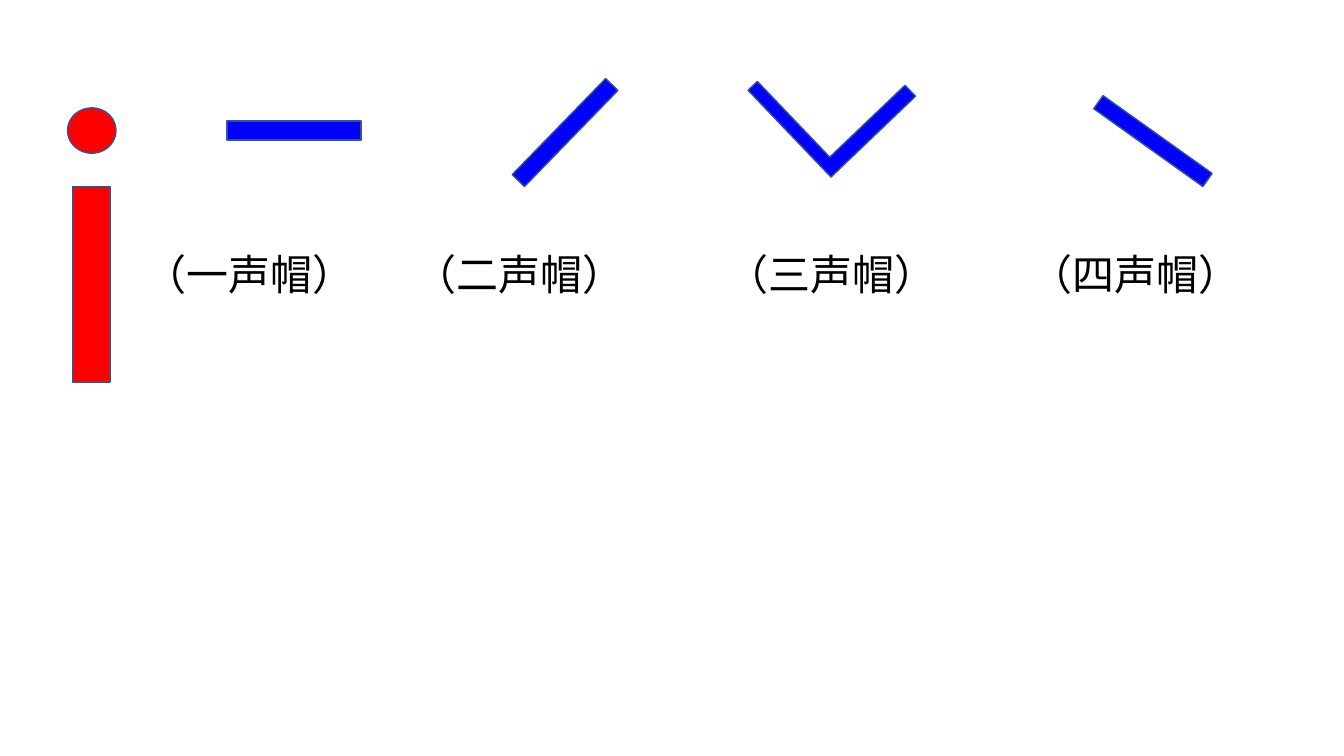
from dataclasses import dataclass

from lxml import etree
from pptx import Presentation
from pptx.dml.color import RGBColor
from pptx.enum.shapes import MSO_SHAPE
from pptx.enum.text import MSO_AUTO_SIZE
from pptx.oxml.ns import qn
from pptx.util import Emu, Pt

RECTANGLE = MSO_SHAPE.RECTANGLE
OVAL = MSO_SHAPE.OVAL
CORNER = MSO_SHAPE.CORNER
GROW_TO_TEXT = MSO_AUTO_SIZE.SHAPE_TO_FIT_TEXT


@dataclass(frozen=True)
class Theme:
    letter: RGBColor = RGBColor(0xFF, 0x00, 0x00)
    tone: RGBColor = RGBColor(0x00, 0x00, 0xFF)
    outline: RGBColor = RGBColor(0x32, 0x54, 0x91)
    text: RGBColor = RGBColor(0x00, 0x00, 0x00)
    font: str = "Noto Sans CJK SC"
    label_size: int = 30
    line_width: int = 1


THEME = Theme()
PX = 9144  # 100 px to the inch
PAGE_SIZE = (1333, 750)

# Content: (kind, (left, top, width, height), rotation, adjustments)
LETTER_STEM = (RECTANGLE, (72, 185, 37, 194), 0, ())
LETTER_DOT = (OVAL, (67, 107, 48, 45), 0, ())
TONE_MARKS = [
    (RECTANGLE, (225, 120, 133, 19), 0, ()),
    (RECTANGLE, (494, 123, 133, 17), 314.2, ()),
    (CORNER, (767, 33, 116, 119), 316.3, (0.13, 0.11)),
    (RECTANGLE, (1077, 132, 133, 16), 35.5, ()),
]
TONE_LABELS = [("（一声帽）", 133), ("（二声帽）", 401),
               ("（三声帽）", 711), ("（四声帽）", 1012)]
LABEL_TOP, LABEL_WIDTH, LABEL_HEIGHT = 242, 231, 61


def scaled(lengths):
    return [Emu(length * PX) for length in lengths]


def add_stroke(page, stroke, color):
    kind, place, rotation, adjustments = stroke
    shape = page.shapes.add_shape(kind, *scaled(place))
    shape.rotation = rotation
    for index, value in enumerate(adjustments):
        shape.adjustments[index] = value
    shape.shadow.inherit = False
    shape.fill.solid()
    shape.fill.fore_color.rgb = color
    shape.line.color.rgb = THEME.outline
    shape.line.width = Pt(THEME.line_width)


def add_label(page, text, left):
    place = (left, LABEL_TOP, LABEL_WIDTH, LABEL_HEIGHT)
    box = page.shapes.add_textbox(*scaled(place))
    frame = box.text_frame
    frame.word_wrap = False
    frame.auto_size = GROW_TO_TEXT
    span = frame.paragraphs[0].add_run()
    span.text = text
    span.font.size = Pt(THEME.label_size)
    span.font.color.rgb = THEME.text
    span.font.name = THEME.font
    # Chinese characters take the East Asian typeface
    east_asian = etree.SubElement(span.font._element, qn("a:ea"))
    east_asian.set("typeface", THEME.font)


def main():
    deck = Presentation()
    deck.slide_width, deck.slide_height = scaled(PAGE_SIZE)
    page = deck.slides.add_slide(deck.slide_layouts[6])

    # Letter i
    for stroke in (LETTER_STEM, LETTER_DOT):
        add_stroke(page, stroke, THEME.letter)

    # Tone marks and their names
    for mark in TONE_MARKS:
        add_stroke(page, mark, THEME.tone)
    for text, left in TONE_LABELS:
        add_label(page, text, left)

    deck.save("out.pptx")


if __name__ == "__main__":
    main()
